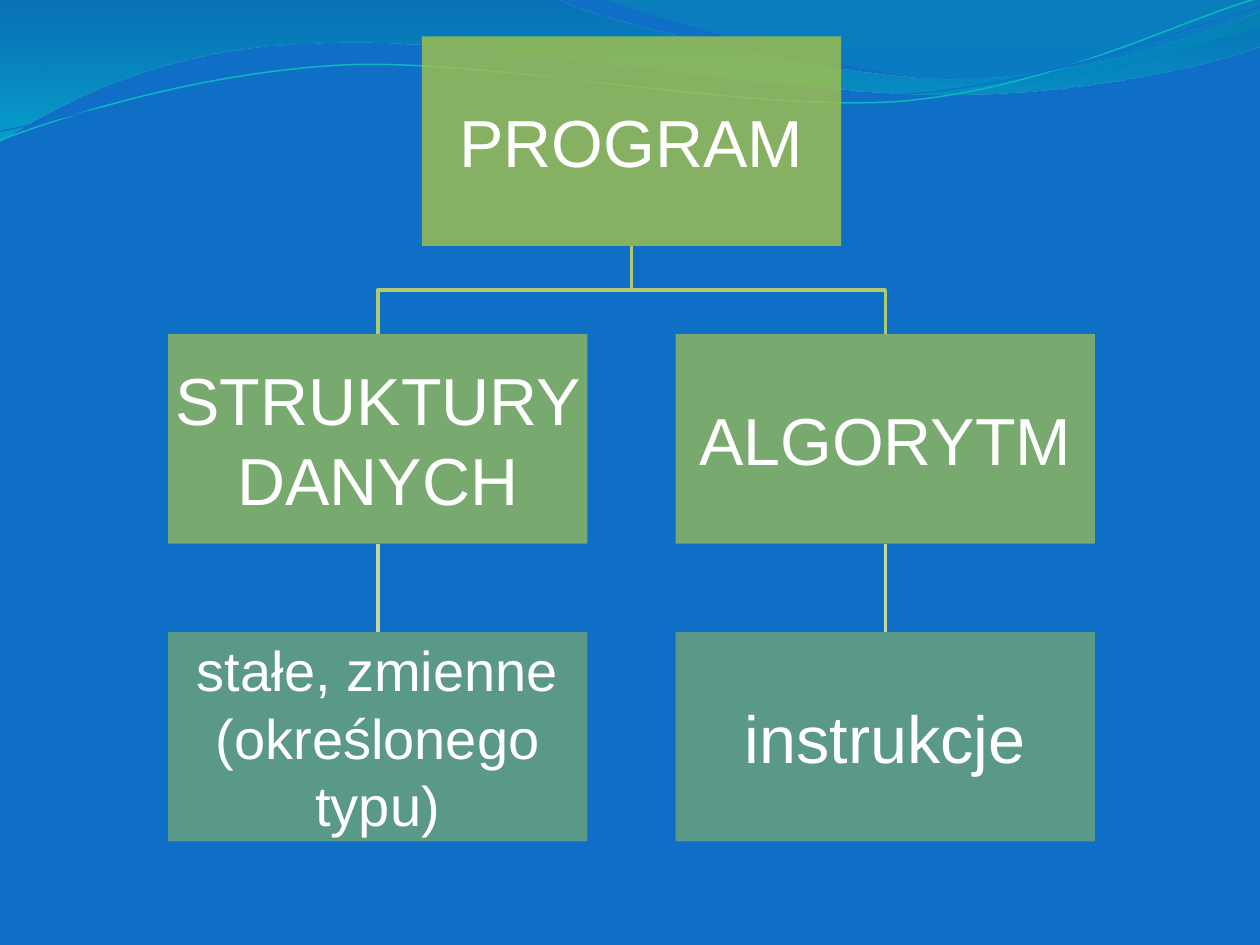
from lxml import etree
from pptx import Presentation
from pptx.dml.color import RGBColor
from pptx.enum.shapes import MSO_SHAPE
from pptx.enum.text import MSO_ANCHOR, PP_ALIGN
from pptx.oxml.ns import qn
from pptx.util import Pt

RECTANGLE = MSO_SHAPE.RECTANGLE
MIDDLE = MSO_ANCHOR.MIDDLE
CENTER = PP_ALIGN.CENTER

BLUE = RGBColor(0x0F, 0x6F, 0xC6)
TEAL = RGBColor(0x0A, 0xB8, 0xBF)
GREEN = RGBColor(0xA5, 0xC2, 0x49)
BRANCH = RGBColor(0xB1, 0xC9, 0x70)
STEM = RGBColor(0xC6, 0xD7, 0x9F)
WHITE = RGBColor(0xFF, 0xFF, 0xFF)

prs = Presentation()
prs.slide_width, prs.slide_height = Pt(720), Pt(540)
slide = prs.slides.add_slide(prs.slide_layouts[6])
slide.background.fill.solid()
slide.background.fill.fore_color.rgb = BLUE


def add_outline(start, segments, close):
    """Draw a freeform; a segment is (x, y) for a line or six numbers for a Bézier curve."""
    builder = slide.shapes.build_freeform(Pt(start[0]), Pt(start[1]))
    for segment in segments:
        vertices = [(Pt(x), Pt(y)) for x, y in zip(segment[::2], segment[1::2])]
        builder.add_line_segments(vertices, close=False)
    if close:
        builder.add_line_segments([], close=True)
    outline = builder.convert_to_shape()
    outline.shadow.inherit = False

    # Merge the three vertices of each curve into one cubic Bézier
    steps = iter(list(outline._element.iter(qn("a:lnTo"))))
    for segment in segments:
        vertices = [next(steps) for _ in range(len(segment) // 2)]
        if len(vertices) == 3:
            curve = etree.Element(qn("a:cubicBezTo"))
            vertices[0].addprevious(curve)
            for vertex in vertices:
                curve.append(vertex[0])
                vertex.getparent().remove(vertex)

    if close:
        outline.line.fill.background()
    else:
        outline.fill.background()
    return outline


def set_opacity(color_element, percent):
    etree.SubElement(color_element, qn("a:alpha")).set("val", str(percent * 1000))


# Waves: start, segments, gradient stops (position, colour, opacity)
waves = [
    ((0, -1),
     [(317, -1), (343, 12, 478, 45, 546, 45), (614, 45, 690, 19, 720, 6.5), (721, 26),
      (708, 32, 626, 55, 537, 54), (448, 54, 275, 20, 185, 24.5), (93, 25, 33, 60, -1, 81)],
     [(0, RGBColor(0x00, 0x74, 0xA1), 45), (1, RGBColor(0x00, 0xC6, 0xCF), 55)]),
    ((345, -1),
     [(366, 8, 491, 45, 554, 47), (616, 50, 692, 23, 720, 15), (720, 0)],
     [(0, RGBColor(0x00, 0xA1, 0xA9), 30), (0.8, RGBColor(0x00, 0x8B, 0xBF), 45)]),
]
for start, segments, stops in waves:
    wave = add_outline(start, segments, close=True)
    wave.fill.gradient()
    wave.fill.gradient_angle = 270
    for stop, (position, color, _) in zip(wave.fill.gradient_stops, stops):
        stop.position = position
        stop.color.rgb = color
    stop_colors = list(wave._element.spPr.iter(qn("a:srgbClr")))
    for color_element, (_, _, opacity) in zip(stop_colors, stops):
        set_opacity(color_element, opacity)

wave_lines = [
    ((0, 80), [(35, 67, 114, 41, 199, 37), (284, 34, 427, 64, 513, 58),
               (600, 51, 675, 11, 719, -1)], TEAL, 0.85),
    ((0, 75), [(34, 69, 118, 44, 204, 40), (290, 37, 430, 60, 516, 54),
               (602, 48, 678, 15, 720, 4)], BLUE, 0.75),
]
for start, segments, color, width in wave_lines:
    wave_line = add_outline(start, segments, close=False).line
    wave_line.color.rgb = color
    wave_line.width = Pt(width)

# Tree grid
BOX_W, BOX_H = 239.7, 119.8
ROW_TOPS = [20.8 + 170.15 * row for row in range(3)]
ROOT_X, LEFT_X, RIGHT_X = 360.9, 215.9, 505.9  # box centres
STEM_W = 7.2

root_bottom = ROW_TOPS[0] + BOX_H
fork_y = (root_bottom + ROW_TOPS[1]) / 2
for x in (RIGHT_X, LEFT_X):
    stem = add_outline((x, ROW_TOPS[1] + BOX_H), [(x, ROW_TOPS[2])], close=False)
    # A vertical line has no width of its own, so its frame gets one
    stem.width = Pt(STEM_W)
    stem._element.find(".//" + qn("a:path")).set("w", str(Pt(STEM_W)))
    branch = add_outline((ROOT_X, root_bottom),
                         [(ROOT_X, fork_y), (x, fork_y), (x, ROW_TOPS[1])], close=False)
    for link, color in ((stem, STEM), (branch, BRANCH)):
        link.line.color.rgb = color
        link.line.width = Pt(2)

# Boxes: centre, row, text, text size
boxes = [
    (ROOT_X, 0, "PROGRAM", 38),
    (LEFT_X, 1, "STRUKTURY \nDANYCH", 38),
    (LEFT_X, 2, "stałe, zmienne\n(określonego typu)", 32),
    (RIGHT_X, 1, "ALGORYTM", 38),
    (RIGHT_X, 2, "instrukcje", 38),
]
ROW_OPACITY = [80, 70, 50]
for x, row, text, size in boxes:
    box = slide.shapes.add_shape(
        RECTANGLE, Pt(x - BOX_W / 2), Pt(ROW_TOPS[row]), Pt(BOX_W), Pt(BOX_H))
    box.shadow.inherit = False
    box.line.fill.background()
    box.fill.solid()
    box.fill.fore_color.rgb = GREEN
    set_opacity(box._element.spPr.find(".//" + qn("a:srgbClr")), ROW_OPACITY[row])
    frame = box.text_frame
    frame.word_wrap = True
    frame.vertical_anchor = MIDDLE
    frame.margin_left = frame.margin_right = Pt(2)
    frame.margin_top = frame.margin_bottom = Pt(2)
    frame.text = text
    for paragraph in frame.paragraphs:
        paragraph.alignment = CENTER
        for run in paragraph.runs:
            run.font.name = "Arial"
            run.font.size = Pt(size)
            run.font.color.rgb = WHITE

prs.save("out.pptx")
